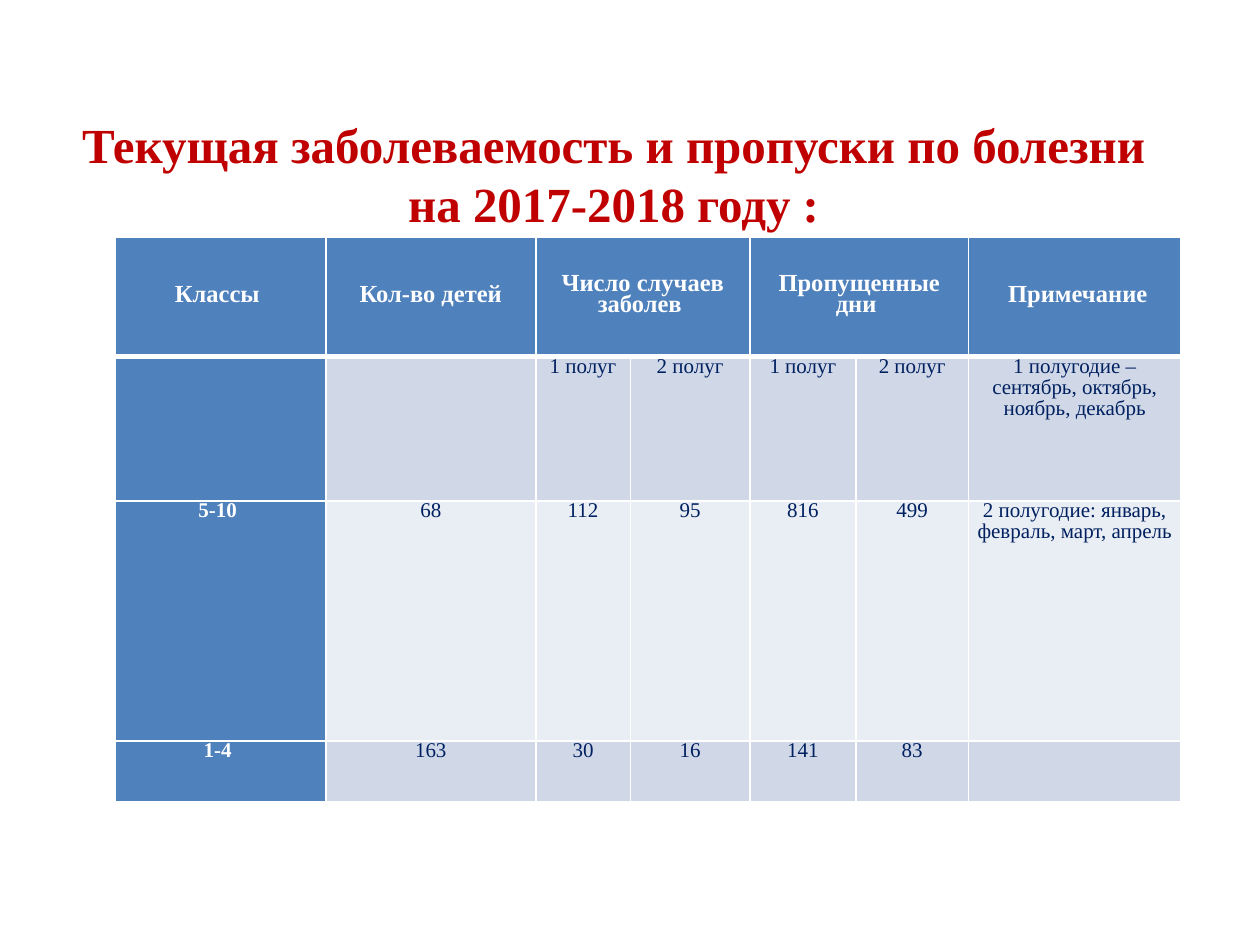
from lxml import etree
from pptx import Presentation
from pptx.dml.color import RGBColor
from pptx.enum.text import MSO_ANCHOR, PP_ALIGN
from pptx.oxml.ns import qn
from pptx.util import Pt

MID = MSO_ANCHOR.MIDDLE
TOP = MSO_ANCHOR.TOP
CENTER = PP_ALIGN.CENTER
WHITE = RGBColor(0xFF, 0xFF, 0xFF)
RED = RGBColor(0xC0, 0x00, 0x00)
NAVY = RGBColor(0x00, 0x20, 0x60)
BLUE = RGBColor(0x4F, 0x81, 0xBD)
DARK = RGBColor(0xD0, 0xD8, 0xE8)
LIGHT = RGBColor(0xE9, 0xED, 0xF4)

TITLE = {"size": Pt(28), "bold": True, "name": "Times New Roman"}
HEAD = {"size": Pt(14), "bold": True, "name": "Times New Roman"}
SIDE = {"size": Pt(12), "bold": True, "name": "Times New Roman"}
BODY = {"size": Pt(12), "bold": False, "name": "Times New Roman"}
INSET = {"margin_left": Pt(5), "margin_right": Pt(5),
         "margin_top": 0, "margin_bottom": 0}

WIDTHS = [120.6, 120, 54, 68.4, 60.5, 64.4, 121.4]
HEIGHTS = [68.4, 82.5, 137, 35]
ROWS = [
    ["Классы ", "Кол-во детей", "Число случаев заболев ", "",
     "Пропущенные дни ", "", " Примечание"],
    ["", "", "1 полуг", "2 полуг", "1 полуг", "2 полуг",
     "1 полугодие –сентябрь, октябрь, ноябрь, декабрь"],
    ["5-10 ", "68", "112", "95", "816", "499",
     "2 полугодие: январь, февраль, март, апрель "],
    ["1-4 ", "163", "30", "16", "141", "83", ""],
]


def write(para, text, style, color):
    para.alignment = CENTER
    run = para.add_run()
    run.text = text
    for key, value in style.items():
        setattr(run.font, key, value)
    run.font.color.rgb = color


def edge(cell, side, width):
    line = etree.SubElement(cell._tc.get_or_add_tcPr(), qn("a:" + side), w=str(Pt(width)))
    fill = etree.SubElement(line, qn("a:solidFill"))
    etree.SubElement(fill, qn("a:srgbClr"), val=str(WHITE))


deck = Presentation()
deck.slide_width, deck.slide_height = Pt(720), Pt(540)
slide = deck.slides.add_slide(deck.slide_layouts[6])

box = slide.shapes.add_textbox(Pt(36), Pt(64.8), Pt(629.3), Pt(68.4))
frame = box.text_frame
frame.word_wrap = True
frame.vertical_anchor = MID
write(frame.paragraphs[0],
      "Текущая заболеваемость и пропуски по болезни на 2017-2018 году :", TITLE, RED)

table = slide.shapes.add_table(len(ROWS), len(WIDTHS), Pt(65.6), Pt(135.4),
                               Pt(sum(WIDTHS)), Pt(sum(HEIGHTS))).table
for col, width in zip(table.columns, WIDTHS):
    col.width = Pt(width)
for row, height in zip(table.rows, HEIGHTS):
    row.height = Pt(height)
for start in (2, 4):
    table.cell(0, start).merge(table.cell(0, start + 1))

for r, texts in enumerate(ROWS):
    for c, text in enumerate(texts):
        cell = table.cell(r, c)
        for key, value in INSET.items():
            setattr(cell, key, value)
        cell.vertical_anchor = TOP if r else MID
        for side, width in (("lnL", 1), ("lnR", 1),
                            ("lnT", 3 if r == 1 else 1), ("lnB", 1 if r else 3)):
            edge(cell, side, width)
        strong = r == 0 or c == 0
        cell.fill.solid()
        cell.fill.fore_color.rgb = BLUE if strong else DARK if r % 2 else LIGHT
        if text:
            para = cell.text_frame.paragraphs[0]
            para.line_spacing = Pt(12)
            style = HEAD if r == 0 else SIDE if c == 0 else BODY
            write(para, text, style, WHITE if strong else NAVY)

deck.save("out.pptx")
